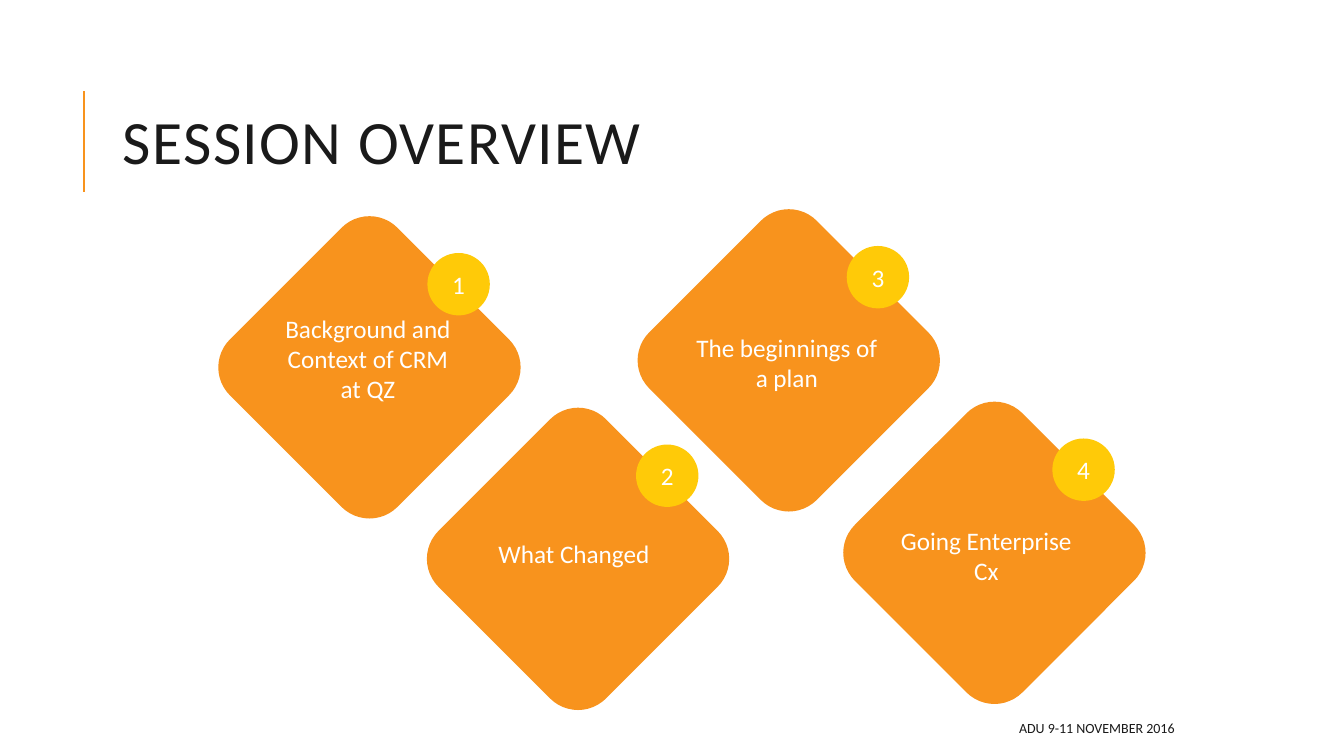
import pptx
import pptx.util
import pptx.dml.color
import pptx.enum.shapes
import pptx.enum.text
import lxml.etree

Pt = pptx.util.Pt
RGB = pptx.dml.color.RGBColor.from_string
SHAPE = pptx.enum.shapes.MSO_SHAPE
ALIGN = pptx.enum.text.PP_ALIGN
ANCHOR = pptx.enum.text.MSO_ANCHOR
AUTO = pptx.enum.text.MSO_AUTO_SIZE

THEME = {
    "font": "Calibri",
    "ink": RGB("1A1A1A"),
    "white": RGB("FFFFFF"),
    "orange": RGB("F8931D"),
    "yellow": RGB("FFCA08"),
    "title": Pt(44),
    "body": Pt(18),
    "footer": Pt(10),
}


def write(sp, lines, size, color, align, anchor):
    tf = sp.text_frame
    tf.word_wrap = True
    tf.vertical_anchor = anchor
    tf.text = "\n".join(lines)
    for p in tf.paragraphs:
        p.alignment = align
        p.font.name = THEME["font"]
        p.font.size = THEME[size]
        p.font.color.rgb = THEME[color]
    return tf


def add_filled(kind, left, top, side, color):
    sp = slide.shapes.add_shape(kind, Pt(left), Pt(top), Pt(side), Pt(side))
    sp.shadow.inherit = False
    sp.fill.solid()
    sp.fill.fore_color.rgb = THEME[color]
    sp.line.fill.background()
    return sp


prs = pptx.Presentation()
prs.slide_width, prs.slide_height = Pt(960), Pt(540)
slide = prs.slides.add_slide(prs.slide_layouts[5])

rule = slide.shapes.add_connector(
    pptx.enum.shapes.MSO_CONNECTOR.STRAIGHT, Pt(60), Pt(137), Pt(60), Pt(65))
rule.line.color.rgb = THEME["orange"]
rule.line.width = Pt(1.5)
lxml.etree.SubElement(rule._element.spPr, pptx.oxml.ns.qn("a:effectLst"))

title = slide.shapes.title
title.left, title.top, title.width, title.height = Pt(80.6), Pt(46), Pt(765.4), Pt(118)
tf = write(title, ["SESSION OVERVIEW"], "title", "ink", ALIGN.LEFT, ANCHOR.MIDDLE)
tf.auto_size = AUTO.NONE
p = tf.paragraphs[0]
p.line_spacing = 0.8
p.runs[0].font._element.set("spc", "100")

DIAMOND, BADGE = 169.2, 44.6
BADGE_DX, BADGE_DY = 126, 2.9
topics = [
    (179.3, 177.8, ["Background and Context of CRM", "at QZ"], (181.8, 220, 162, 72.7)),
    (328.3, 314.6, ["What Changed"], (329, 380.9, 162, 29.1)),
    (478.8, 172.8, ["The beginnings of", "a plan"], (481, 234, 162, 50.9)),
    (625.7, 310.3, ["Going Enterprise Cx"], (630.7, 371.5, 147.6, 50.9)),
]
for number, (left, top, lines, box) in enumerate(topics, 1):
    diamond = add_filled(SHAPE.ROUNDED_RECTANGLE, left, top, DIAMOND, "orange")
    diamond.rotation = 45
    badge = add_filled(SHAPE.OVAL, left + BADGE_DX, top + BADGE_DY, BADGE, "yellow")
    write(badge, [str(number)], "body", "white", ALIGN.CENTER, ANCHOR.MIDDLE)
    label = slide.shapes.add_textbox(*map(Pt, box))
    tf = write(label, lines, "body", "white", ALIGN.CENTER, ANCHOR.TOP)
    tf.auto_size = AUTO.SHAPE_TO_FIT_TEXT

footer = slide.shapes.add_textbox(Pt(381.6), Pt(509.4), Pt(464.4), Pt(21.6))
write(footer, ["ADU 9-11 NOVEMBER 2016"], "footer", "ink", ALIGN.RIGHT, ANCHOR.MIDDLE)

prs.save("out.pptx")
